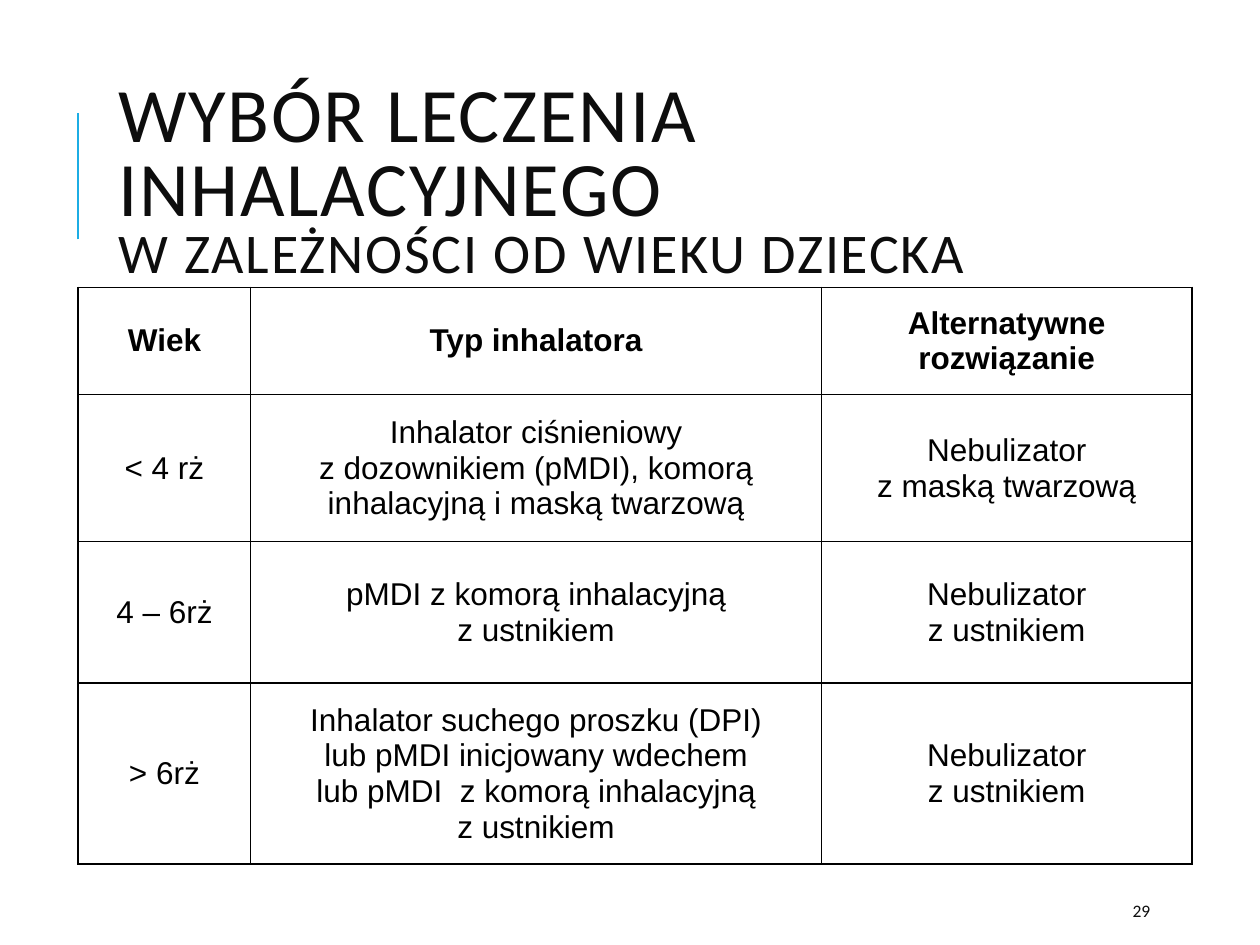
from lxml.etree import SubElement
from pptx import Presentation
from pptx.dml.color import RGBColor
from pptx.enum.shapes import MSO_CONNECTOR
from pptx.enum.text import MSO_ANCHOR, PP_ALIGN
from pptx.oxml.ns import qn
from pptx.util import Inches, Pt

TITLE = [("WYBÓR LECZENIA INHALACYJNEGO", 44), ("W ZALEŻNOŚCI OD WIEKU DZIECKA", 32)]
PAGE_NUMBER = "29"
TREATMENTS = [
    ("Wiek", "Typ inhalatora", "Alternatywne rozwiązanie"),
    ("< 4 rż",
     "Inhalator ciśnieniowy\nz dozownikiem (pMDI), komorą inhalacyjną i maską twarzową",
     "Nebulizator\nz maską twarzową"),
    ("4 – 6rż", "pMDI z komorą inhalacyjną\nz ustnikiem", "Nebulizator\nz ustnikiem"),
    ("> 6rż",
     "Inhalator suchego proszku (DPI)\nlub pMDI inicjowany wdechem\n"
     "lub pMDI  z komorą inhalacyjną\nz ustnikiem",
     "Nebulizator\nz ustnikiem"),
]
COLORS = {"accent": "1CADE4", "heading": "0D0D0D", "table": "000000"}

SLIDE_W, SLIDE_H = 10, 7.5
MARGIN = 0.62
TABLE_TOP = 2.28
COLUMNS = [1.37, 4.53, 2.94]
ROWS = [0.85, 1.17, 1.12, 1.44]
ACCENT_SPAN = (0.12 * SLIDE_H, 1.9)
TITLE_BOX = (0.84, 0.64, 7.97, TABLE_TOP - 0.64)
NUMBER_BOX = (8.89, 7.08, 0.8, 0.3)


def color(name):
    return RGBColor.from_string(COLORS[name])


def add_lines(paragraph, lines, font_name, color_name, bold=False, tracking=0):
    """Add (text, size) lines as runs parted by line breaks."""
    for index, (text, size) in enumerate(lines):
        if index:
            paragraph.add_line_break()
        run = paragraph.add_run()
        run.text = text
        font = run.font
        font.name, font.size, font.bold = font_name, Pt(size), bold
        font.color.rgb = color(color_name)
        if tracking:
            font._element.set("spc", str(tracking * 100))


def add_text_box(slide, box, lines, line_spacing=1.0, tracking=0):
    frame = slide.shapes.add_textbox(*map(Inches, box)).text_frame
    frame.word_wrap = True
    frame.vertical_anchor = MSO_ANCHOR.MIDDLE
    paragraph = frame.paragraphs[0]
    paragraph.line_spacing = line_spacing
    add_lines(paragraph, lines, "Calibri", "heading", tracking=tracking)


def add_borders(cell):
    properties = cell._tc.get_or_add_tcPr()
    for position, side in enumerate(("lnL", "lnR", "lnT", "lnB")):
        border = SubElement(properties, qn(f"a:{side}"), w=str(Pt(1)))
        fill = SubElement(border, qn("a:solidFill"))
        SubElement(fill, qn("a:srgbClr"), val=COLORS["table"])
        properties.insert(position, border)


def add_treatment_table(slide):
    frame = slide.shapes.add_table(
        len(ROWS), len(COLUMNS), Inches(MARGIN), Inches(TABLE_TOP),
        Inches(sum(COLUMNS)), Inches(sum(ROWS)))
    table = frame.table
    table.horz_banding = False
    for column, width in zip(table.columns, COLUMNS):
        column.width = Inches(width)
    for row, height, texts in zip(table.rows, ROWS, TREATMENTS):
        row.height = Inches(height)
        for cell, text in zip(row.cells, texts):
            cell.fill.background()
            cell.vertical_anchor = MSO_ANCHOR.MIDDLE
            paragraph = cell.text_frame.paragraphs[0]
            paragraph.alignment = PP_ALIGN.CENTER
            paragraph.line_spacing = 1.01
            paragraph.space_before, paragraph.space_after = Pt(6.4), Pt(1.4)
            lines = [(line, 18) for line in text.split("\n")]
            add_lines(paragraph, lines, "Arial", "table", bold=texts is TREATMENTS[0])
            add_borders(cell)


def add_accent_line(slide):
    top, bottom = ACCENT_SPAN
    accent = slide.shapes.add_connector(
        MSO_CONNECTOR.STRAIGHT, Inches(MARGIN), Inches(bottom), Inches(MARGIN), Inches(top))
    accent.line.color.rgb = color("accent")
    accent.line.width = Pt(1.5)
    SubElement(accent._element.spPr, qn("a:effectLst"))


def main():
    deck = Presentation()
    deck.slide_width, deck.slide_height = Inches(SLIDE_W), Inches(SLIDE_H)
    slide = deck.slides.add_slide(deck.slide_layouts[6])
    add_accent_line(slide)
    add_text_box(slide, TITLE_BOX, TITLE, line_spacing=0.8, tracking=1)
    add_text_box(slide, NUMBER_BOX, [(PAGE_NUMBER, 10)])
    add_treatment_table(slide)
    deck.save("out.pptx")


if __name__ == "__main__":
    main()
